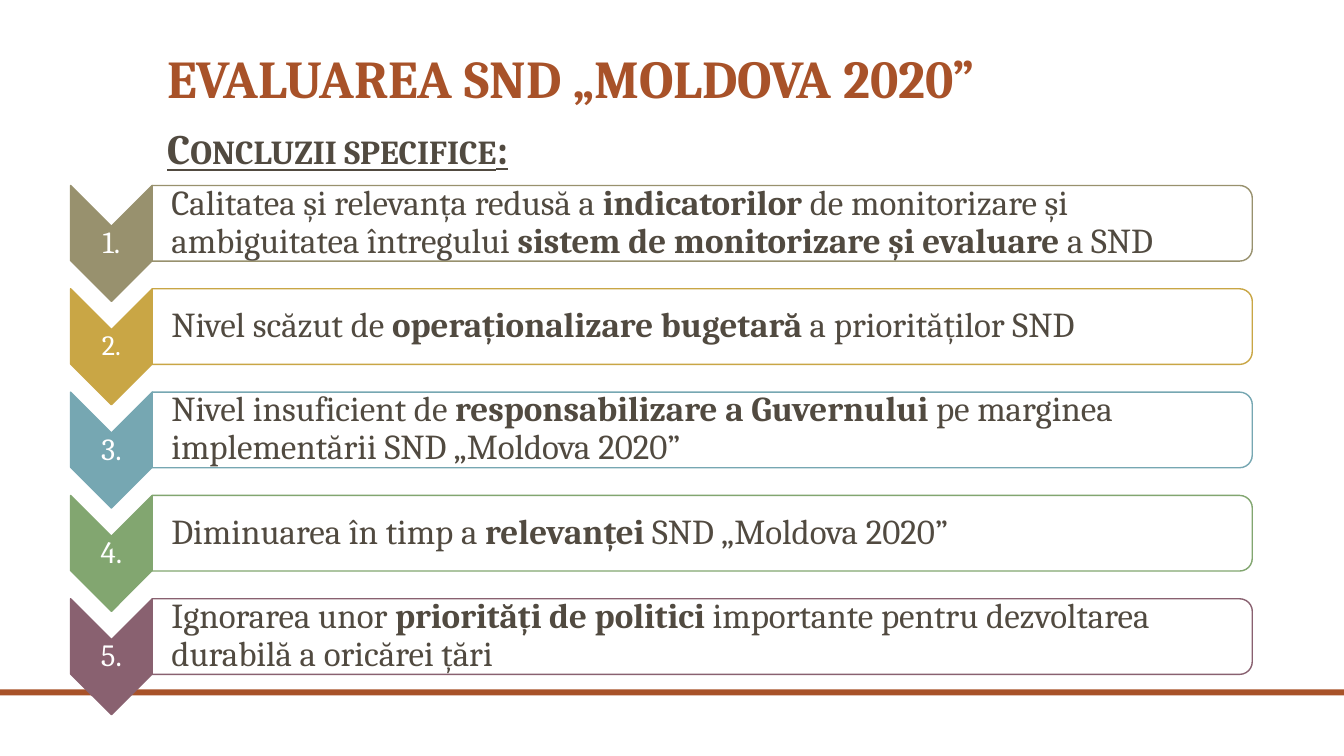
from lxml import etree
from pptx import Presentation
from pptx.dml.color import RGBColor
from pptx.enum import shapes, text
from pptx.oxml.ns import qn
from pptx.util import Inches, Pt

RUST = RGBColor(0xA8, 0x52, 0x29)
INK = RGBColor(0x51, 0x4A, 0x40)
WHITE = RGBColor(0xFF, 0xFF, 0xFF)
OLIVE = RGBColor(0x98, 0x91, 0x6E)
GOLD = RGBColor(0xC9, 0xA6, 0x45)
TEAL = RGBColor(0x76, 0xA7, 0xB2)
GREEN = RGBColor(0x82, 0xA6, 0x70)
PLUM = RGBColor(0x89, 0x61, 0x70)

# Accent colour, number size, then text parts alternating regular and bold
CONCLUSIONS = [
    (OLIVE, 22, ["Calitatea și relevanța redusă a ", "indicatorilor",
                 " de monitorizare și ambiguitatea întregului ",
                 "sistem de monitorizare și evaluare ", "a SND"]),
    (GOLD, 20, ["Nivel scăzut de ", "operaționalizare bugetară ",
                "a priorităților SND"]),
    (TEAL, 22, ["Nivel insuficient de ", "responsabilizare a Guvernului ",
                "pe marginea implementării SND „Moldova 2020”"]),
    (GREEN, 22, ["Diminuarea în timp a ", "relevanței",
                 " SND „Moldova 2020”"]),
    (PLUM, 22, ["Ignorarea unor ", "priorități de politici ",
                "importante pentru dezvoltarea durabilă a oricărei țări"]),
]
ROW_TOP, ROW_PITCH = 1.84, 1.025
ROW_HEIGHT, ROW_LEFT, ROW_WIDTH = 0.75, 1.51, 10.91


def add_run(p, content, size=25, color=INK, bold=False, underline=False,
            small_caps=False, font="Cambria"):
    r = p.add_run()
    r.text = content
    f = r.font
    f.name, f.size, f.bold, f.underline = font, Pt(size), bold, underline
    f.color.rgb = color
    if small_caps:
        f._element.set("cap", "small")
    return r


class SlideBuilder:
    def __init__(self, slide):
        self.s = slide

    def shape(self, kind, x, y, w, h, fill, line=None, alpha=None):
        sp = self.s.shapes.add_shape(kind, Inches(x), Inches(y),
                                     Inches(w), Inches(h))
        sp.shadow.inherit = False
        sp.fill.solid()
        sp.fill.fore_color.rgb = fill
        if alpha is not None:
            clr = sp._element.spPr.find(".//" + qn("a:srgbClr"))
            etree.SubElement(clr, qn("a:alpha"), val=str(alpha * 1000))
        if line is None:
            sp.line.fill.background()
        else:
            sp.line.color.rgb = line
            sp.line.width = Pt(1)
        return sp

    def turned(self, kind, x, y, w, h, fill, line, alpha=None):
        """Place a quarter-turned shape by the box it visibly covers."""
        sp = self.shape(kind, x + (w - h) / 2, y + (h - w) / 2, h, w,
                        fill, line, alpha)
        sp.rotation = 90
        return sp

    def textbox(self, x, y, w, h, anchor=text.MSO_ANCHOR.MIDDLE,
                align=text.PP_ALIGN.LEFT, spacing=0.9,
                insets=(0.1, 0.05, 0.1, 0.05)):
        tf = self.s.shapes.add_textbox(Inches(x), Inches(y),
                                       Inches(w), Inches(h)).text_frame
        tf.word_wrap = True
        tf.vertical_anchor = anchor
        (tf.margin_left, tf.margin_top,
         tf.margin_right, tf.margin_bottom) = map(Inches, insets)
        p = tf.paragraphs[0]
        p.alignment, p.line_spacing = align, spacing
        return p

    def conclusion(self, number, top, color, number_size, parts):
        # Numbered chevron pointing down
        self.turned(shapes.MSO_SHAPE.CHEVRON, 0.7, top, 0.81, 1.15,
                    color, color)
        p = self.textbox(0.7, top + 0.4, 0.81, 0.35,
                         align=text.PP_ALIGN.CENTER, insets=(0.02,) * 4)
        add_run(p, f"{number}.", size=number_size, color=WHITE)
        # Outlined box with its text
        self.turned(shapes.MSO_SHAPE.ROUND_2_SAME_RECTANGLE, ROW_LEFT, top,
                    ROW_WIDTH, ROW_HEIGHT, WHITE, color, alpha=90)
        p = self.textbox(ROW_LEFT, top + 0.03, 10.87, 0.68,
                         insets=(0.19, 0.02, 0.02, 0.02))
        for i, part in enumerate(parts):
            add_run(p, part, bold=i % 2 == 1)


def main():
    prs = Presentation()
    prs.slide_width, prs.slide_height = Inches(13.33), Inches(7.5)
    s = SlideBuilder(prs.slides.add_slide(prs.slide_layouts[6]))

    # Footer bar
    s.shape(shapes.MSO_SHAPE.RECTANGLE, 0, 6.84, 13.33, 0.06, RUST)

    # Subtitle and title
    p = s.textbox(1.56, 1.1, 8.48, 0.73, anchor=text.MSO_ANCHOR.TOP,
                  spacing=1.14)
    heading = dict(size=30, bold=True, underline=True)
    add_run(p, "Concluzii specifice", small_caps=True, **heading)
    add_run(p, ":", **heading)
    p = s.textbox(1.56, 0.41, 10.35, 0.73, anchor=text.MSO_ANCHOR.BOTTOM)
    add_run(p, "EVALUAREA SND „MOLDOVA 2020”", size=38, color=RUST, bold=True)

    # Conclusions
    for i, row in enumerate(CONCLUSIONS):
        s.conclusion(i + 1, ROW_TOP + i * ROW_PITCH, *row)

    prs.save("out.pptx")


if __name__ == "__main__":
    main()
